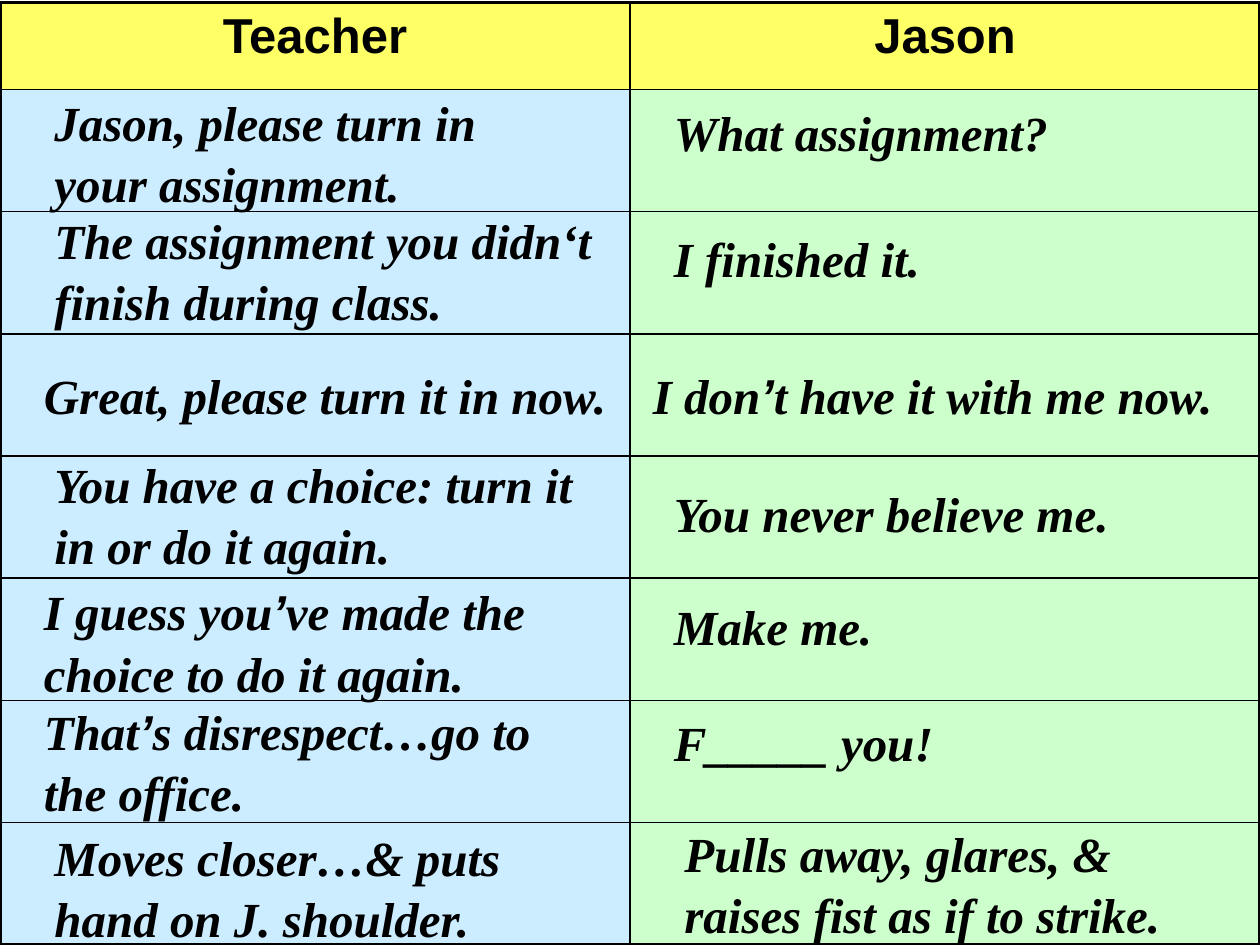
import lxml.etree
import pptx
import pptx.dml.color
import pptx.enum.text
import pptx.oxml.ns
import pptx.util

BLACK = pptx.dml.color.RGBColor(0x00, 0x00, 0x00)
YELLOW = pptx.dml.color.RGBColor(0xFF, 0xFF, 0x66)
BLUE = pptx.dml.color.RGBColor(0xCC, 0xEC, 0xFF)
GREEN = pptx.dml.color.RGBColor(0xCC, 0xFF, 0xCC)
WIDTH, HEIGHT = pptx.util.Inches(10), pptx.util.Inches(7.5)
COL, ROW = WIDTH / 120, HEIGHT / 90
SERIF, SANS = "Times New Roman", "Arial"

HEADERS = ("Teacher", "Jason")
TEACHER = (
    (4, 8, 52, 2, "Jason, please turn in your assignment."),
    (4, 19.2, 55, 2, "The assignment you didn‘t finish during class."),
    (3, 34, 56, 1, "Great, please turn it in now."),
    (4, 42.5, 54, 2, "You have a choice: turn it in or do it again."),
    (3, 54.6, 52, 2, "I guess you’ve made the choice to do it again."),
    (3, 66, 52, 2, "That’s disrespect…go to the office."),
    (4, 78, 52, 2, "Moves closer…& puts hand on J. shoulder."),
)
JASON = (
    (3, 9, 52, 1, "What assignment?"),
    (3, 21, 52, 1, "I finished it."),
    (1, 34, 59, 1, "I don’t have it with me now."),
    (3, 45.2, 52, 1, "You never believe me."),
    (3, 56, 52, 1, "Make me."),
    (3, 67, 52, 1, "F_____ you!"),
    (4, 77.6, 52, 2, "Pulls away, glares, & raises fist as if to strike."),
)


def write(tf, text, font=SERIF, italic=False, align=None, spacing=None):
    """Fill a text frame with one bold paragraph, its apostrophes in Arial."""
    p = tf.paragraphs[0]
    p.alignment = align
    p.line_spacing = spacing
    before, mark, after = text.partition("’")
    for part, name in ((before, font), (mark, SANS), (after, font)):
        if part:
            r = p.add_run()
            r.text = part
            r.font.name, r.font.size = name, pptx.util.Pt(28)
            r.font.bold, r.font.italic = True, italic
            r.font.color.rgb = BLACK


def border(cell, widths):
    """Draw black borders on the left, right, top and bottom of a cell."""
    tcPr = cell._tc.get_or_add_tcPr()
    for i, (side, width) in enumerate(zip("LRTB", widths)):
        ln = lxml.etree.Element(pptx.oxml.ns.qn(f"a:ln{side}"), w=str(pptx.util.Pt(width)))
        fill = lxml.etree.SubElement(ln, pptx.oxml.ns.qn("a:solidFill"))
        lxml.etree.SubElement(fill, pptx.oxml.ns.qn("a:srgbClr"), val=str(BLACK))
        tcPr.insert(i, ln)


def grid_table(s, left, top, width, height, rows=8, cols=2):
    """Place the coloured grid with its two headings."""
    table = s.shapes.add_table(rows, cols, int(left), int(top), int(width), int(height)).table
    header = 8.28 * ROW
    for i, row in enumerate(table.rows):
        row.height = int(header if i == 0 else (height - header) / (rows - 1))
        for j, cell in enumerate(row.cells):
            cell.fill.solid()
            cell.fill.fore_color.rgb = YELLOW if i == 0 else (BLUE, GREEN)[j]
            outer = (j == 0, j == cols - 1, i == 0, i == rows - 1)
            border(cell, [2.25 if edge else 1 for edge in outer])
            if i == 0:
                write(cell.text_frame, HEADERS[j], font=SANS,
                      align=pptx.enum.text.PP_ALIGN.CENTER)


def speech(s, left, top, lines):
    """Place one speaker's lines within the column that starts at left, top."""
    for x, y, width, count, text in lines:
        sp = s.shapes.add_textbox(int(left + x * COL), int(top + y * ROW),
                                  int(width * COL), int((1.3 + 5.55 * count) * ROW))
        tf = sp.text_frame
        tf.word_wrap = True
        write(tf, text, italic=True, spacing=1.04)


def main():
    """Build and save the slide."""
    prs = pptx.Presentation()
    prs.slide_width, prs.slide_height = WIDTH, HEIGHT
    s = prs.slides.add_slide(prs.slide_layouts[6])
    grid_table(s, 0, 0.24 * ROW, WIDTH, 89.76 * ROW)
    speech(s, 0, 0, TEACHER)
    speech(s, 60 * COL, 0, JASON)
    prs.save("out.pptx")


if __name__ == "__main__":
    main()
